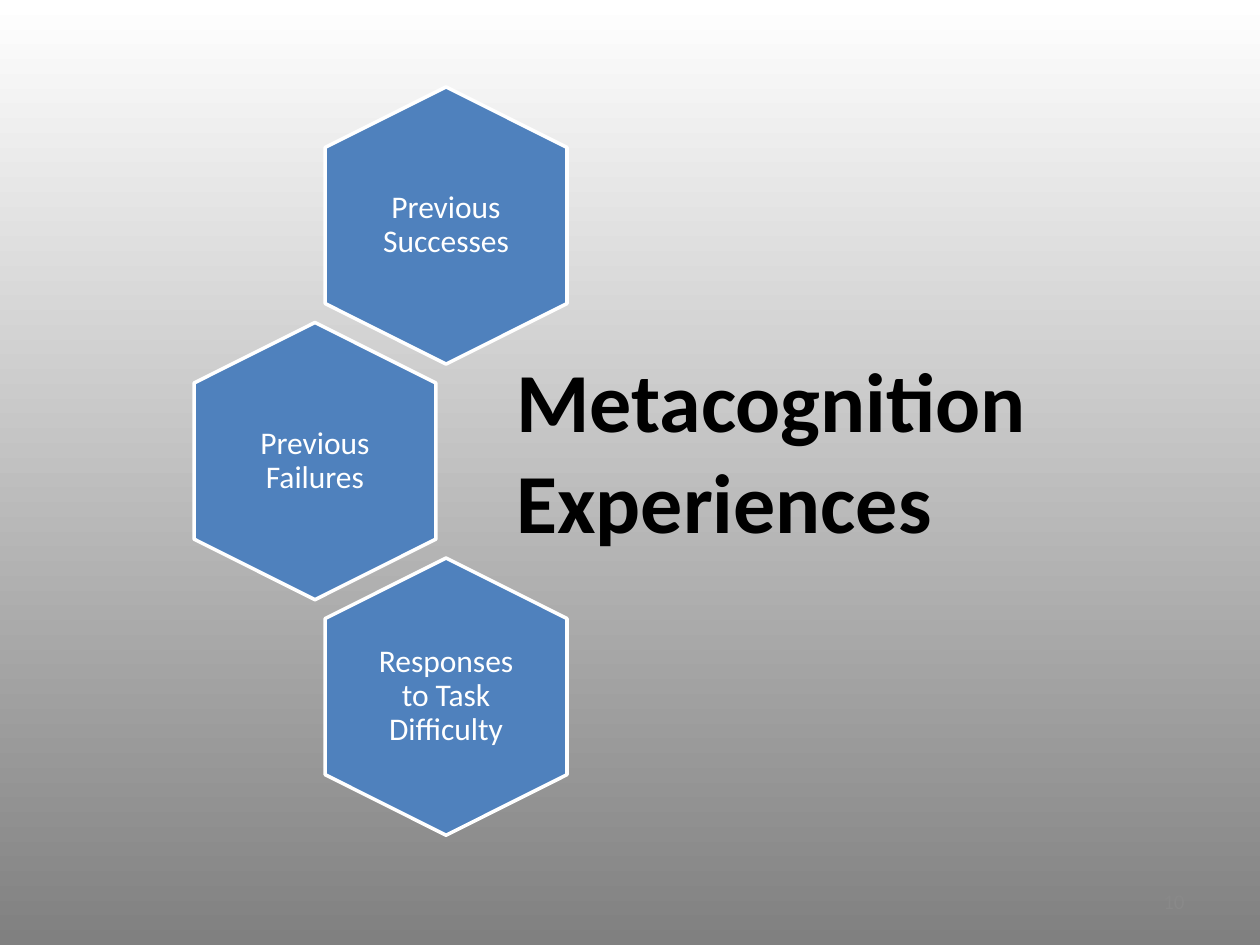
"""Build the Metacognition Experiences slide with its honeycomb of three hexagons."""
from dataclasses import dataclass

from pptx import Presentation
from pptx.dml.color import RGBColor
from pptx.enum.text import MSO_ANCHOR as Anchor, PP_ALIGN as Align
from pptx.slide import Slide
from pptx.util import Pt

BLUE = RGBColor(0x4F, 0x81, 0xBD)
WHITE = RGBColor(0xFF, 0xFF, 0xFF)
BLACK = RGBColor(0x00, 0x00, 0x00)
GRAY = RGBColor(0x80, 0x80, 0x80)
NUMBER_GRAY = RGBColor(0x89, 0x89, 0x89)
FONT = "Calibri"

HEX_WIDTH, HEX_HEIGHT, HEX_SHOULDER = 138.2, 158.4, 34.6
OUTER_LEFT, INNER_LEFT = 110.9, 185.8
FIRST_TOP, ROW_PITCH = 49.7, 134.6


@dataclass(frozen=True)
class Hexagon:
    text: str
    left: float


@dataclass(frozen=True)
class Label:
    lines: tuple[str, ...]
    left: float
    top: float
    width: float
    height: float
    size: float
    color: RGBColor
    bold: bool = False
    align: Align = Align.LEFT
    anchor: Anchor = Anchor.TOP


HEXAGONS = (
    Hexagon("Previous Successes", INNER_LEFT),
    Hexagon("Previous Failures", OUTER_LEFT),
    Hexagon("Responses to Task Difficulty", INNER_LEFT),
)
LABELS = (
    Label(("Metacognition", "Experiences"), 288, 195.8, 417.6, 123.8, 48, BLACK, bold=True),
    Label(("10",), 516, 500.5, 168, 28.8, 12, NUMBER_GRAY,
          align=Align.RIGHT, anchor=Anchor.MIDDLE),
)


def paint_background(slide: Slide) -> None:
    fill = slide.background.fill
    fill.gradient()
    fill.gradient_angle = 90
    for stop, color in zip(fill.gradient_stops, (GRAY, WHITE)):
        stop.color.rgb = color


def draw_hexagon(slide: Slide, hexagon: Hexagon, top: float) -> None:
    left, right = hexagon.left, hexagon.left + HEX_WIDTH
    middle, bottom = hexagon.left + HEX_WIDTH / 2, top + HEX_HEIGHT
    upper, lower = top + HEX_SHOULDER, bottom - HEX_SHOULDER
    corners = ((right, upper), (right, lower), (middle, bottom), (left, lower), (left, upper))
    builder = slide.shapes.build_freeform(Pt(middle), Pt(top))
    builder.add_line_segments([(Pt(x), Pt(y)) for x, y in corners], close=True)
    shape = builder.convert_to_shape()
    shape.shadow.inherit = False
    shape.fill.solid()
    shape.fill.fore_color.rgb = BLUE
    shape.line.color.rgb = WHITE
    shape.line.width = Pt(2)

    frame = shape.text_frame
    frame.word_wrap = True
    frame.vertical_anchor = Anchor.MIDDLE
    frame.margin_left = frame.margin_right = Pt(26.6)
    frame.margin_top = frame.margin_bottom = Pt(30.2)
    paragraph = frame.paragraphs[0]
    paragraph.text = hexagon.text
    paragraph.alignment = Align.CENTER
    paragraph.line_spacing = 0.9
    paragraph.font.name = FONT
    paragraph.font.size = Pt(18)
    paragraph.font.color.rgb = WHITE


def draw_label(slide: Slide, label: Label) -> None:
    box = slide.shapes.add_textbox(
        Pt(label.left), Pt(label.top), Pt(label.width), Pt(label.height))
    frame = box.text_frame
    frame.word_wrap = True
    frame.vertical_anchor = label.anchor
    frame.text = "\n".join(label.lines)
    for paragraph in frame.paragraphs:
        paragraph.alignment = label.align
        paragraph.font.name = FONT
        paragraph.font.size = Pt(label.size)
        paragraph.font.bold = label.bold
        paragraph.font.color.rgb = label.color


def main() -> None:
    presentation = Presentation()
    presentation.slide_width, presentation.slide_height = Pt(720), Pt(540)
    slide = presentation.slides.add_slide(presentation.slide_layouts[6])
    paint_background(slide)
    for row, hexagon in enumerate(HEXAGONS):
        draw_hexagon(slide, hexagon, FIRST_TOP + row * ROW_PITCH)
    for label in LABELS:
        draw_label(slide, label)
    presentation.save("out.pptx")


if __name__ == "__main__":
    main()
